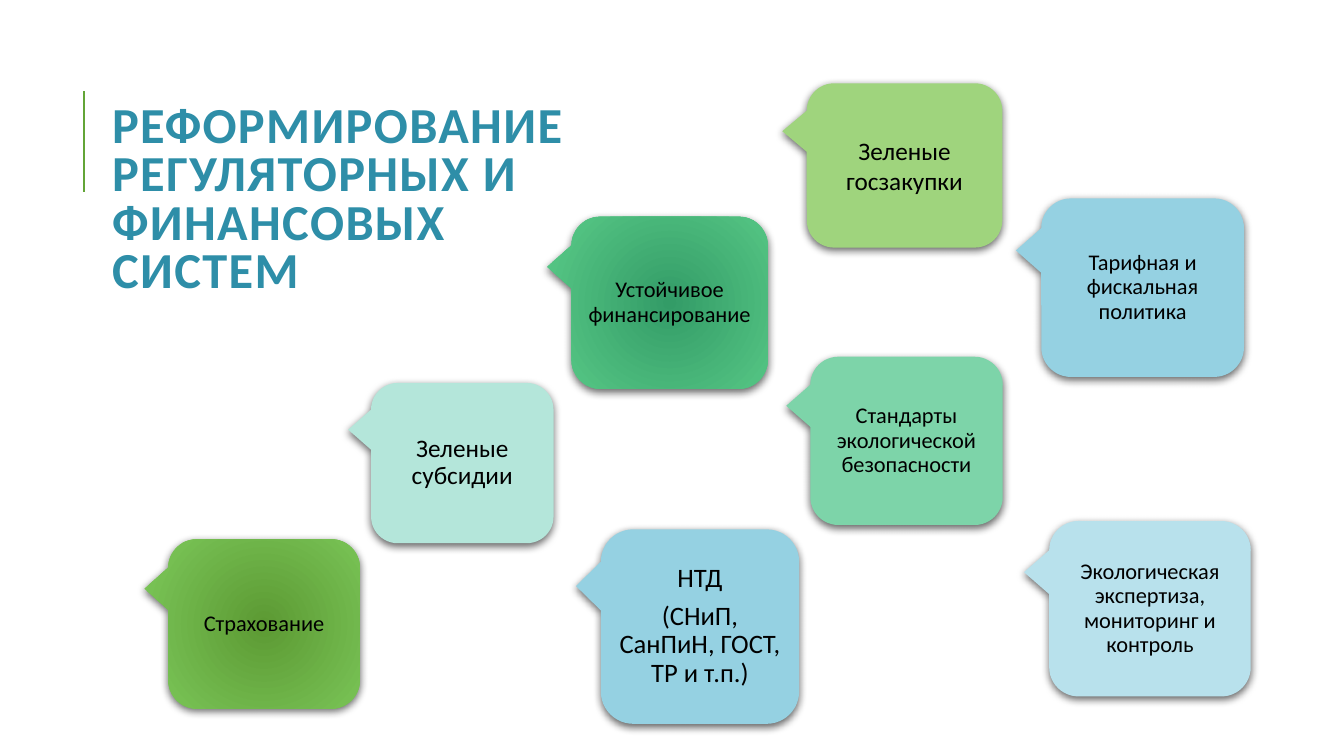
from lxml.etree import SubElement
from pptx import Presentation
from pptx.dml.color import RGBColor
from pptx.enum.shapes import MSO_CONNECTOR, MSO_SHAPE
from pptx.enum.text import MSO_ANCHOR, MSO_AUTO_SIZE, PP_ALIGN
from pptx.oxml import parse_xml
from pptx.oxml.ns import nsdecls, qn
from pptx.util import Cm, Pt

FONT = "Calibri"
BLACK = RGBColor(0x00, 0x00, 0x00)
TEAL = RGBColor(0x2E, 0x8E, 0xA8)
LEAF = RGBColor(0x63, 0xA5, 0x37)
SKY = RGBColor(0x95, 0xD1, 0xE2)
ICE = RGBColor(0xB8, 0xE1, 0xEC)
MINT = RGBColor(0xB4, 0xE6, 0xDA)
LIME = RGBColor(0x9F, 0xD4, 0x7D)
JADE = RGBColor(0x7D, 0xD4, 0xA9)
# Radial fills run from the centre to the edge
PINE = (RGBColor(0x33, 0x9C, 0x67), RGBColor(0x55, 0xC5, 0x84))
GRASS = (RGBColor(0x5C, 0x9A, 0x33), RGBColor(0x79, 0xC3, 0x56))

# The text area keeps clear of the rounded corners by this share of the side
CORNER = 0.0488

# Left, top, width, height in cm, fill, text size, text margin in cm, lines
CALLOUTS = [
    (26.24, 5.0, 5.11, 4.5, SKY, 16, 0.18, ["Тарифная и фискальная политика"]),
    (14.4, 5.46, 4.95, 4.34, PINE, 16, 0, ["Устойчивое финансирование"]),
    (9.35, 9.65, 4.6, 4.04, MINT, 18, 0.18, ["Зеленые субсидии"]),
    (20.33, 2.1, 4.93, 4.14, LIME, 18, 0, ["Зеленые госзакупки"]),
    (20.42, 8.99, 4.85, 4.24, JADE, 16, 0.18,
     ["Стандарты экологической безопасности"]),
    (4.24, 13.59, 4.83, 4.27, GRASS, 16, 0, ["Страхование"]),
    (15.14, 13.34, 5.0, 4.9, SKY, 19, 0.2,
     ["НТД", "(СНиП, СанПиН, ГОСТ, ТР и т.п.)"]),
    (26.44, 13.13, 5.08, 4.42, ICE, 16, 0,
     ["Экологическая экспертиза, мониторинг и контроль"]),
]


def write(frame, lines, size=16, color=BLACK, bold=False, align=PP_ALIGN.CENTER,
          lead=0.9, after=0, track=0, inset=None):
    frame.word_wrap = True
    frame.auto_size = MSO_AUTO_SIZE.NONE
    frame.vertical_anchor = MSO_ANCHOR.MIDDLE
    if inset is not None:
        frame.margin_left = frame.margin_right = Cm(inset)
        frame.margin_top = frame.margin_bottom = Cm(inset)
    for num, line in enumerate(lines):
        para = frame.add_paragraph() if num else frame.paragraphs[0]
        para.alignment = align
        para.line_spacing = lead
        para.space_before = Pt(0)
        para.space_after = Pt(after)
        run = para.add_run()
        run.text = line
        font = run.font
        font.name, font.size, font.bold = FONT, Pt(size), bold
        font.color.rgb = color
        if track:
            run._r.get_or_add_rPr().set("spc", str(track * 100))


def paint(shape, fill):
    if isinstance(fill, RGBColor):
        shape.fill.solid()
        shape.fill.fore_color.rgb = fill
        return
    shape.fill.gradient()
    for stop, color in zip(shape.fill.gradient_stops, fill):
        stop.color.rgb = color
    # Swap the linear direction for a circular one
    grad = shape._element.spPr.find(qn("a:gradFill"))
    grad.remove(grad.find(qn("a:lin")))
    grad.append(parse_xml(
        f'<a:path {nsdecls("a")} path="circle"><a:fillToRect l="100000" '
        't="100000" r="100000" b="100000"/></a:path>'))


def shade(shape):
    shape._element.spPr.append(parse_xml(
        f'<a:effectLst {nsdecls("a")}><a:outerShdw blurRad="{Pt(6)}" '
        f'dist="{Pt(2)}" dir="5400000" rotWithShape="0"><a:srgbClr '
        'val="000000"><a:alpha val="60000"/></a:srgbClr></a:outerShdw>'
        '</a:effectLst>'))


def add_callout(slide, left, top, wide, high, fill, size, inset, lines):
    group = slide.shapes.add_group_shape()
    # A quarter turn swaps the sides and brings the tail to the left
    shift = (wide - high) / 2
    shape = group.shapes.add_shape(
        MSO_SHAPE.ROUNDED_RECTANGULAR_CALLOUT,
        Cm(left + shift), Cm(top - shift), Cm(high), Cm(wide))
    shape.rotation = 90
    paint(shape, fill)
    shape.line.fill.background()
    shade(shape)
    # Upright text over the same centre
    pad = CORNER * min(wide, high)
    box = group.shapes.add_textbox(Cm(left + pad), Cm(top + pad),
                                   Cm(wide - 2 * pad), Cm(high - 2 * pad))
    lead = 1.0 if fill == LIME else 0.9
    write(box.text_frame, lines, size=size, lead=lead, after=6, inset=inset)


def add_rule(slide):
    rule = slide.shapes.add_connector(
        MSO_CONNECTOR.STRAIGHT, Cm(2.11), Cm(4.83), Cm(2.11), Cm(2.29))
    rule.line.color.rgb = LEAF
    rule.line.width = Pt(1.5)
    SubElement(rule._element.spPr, qn("a:effectLst"))


def add_title(slide):
    title = slide.shapes.title
    title.left, title.top = Cm(2.57), Cm(1.37)
    title.width, title.height = Cm(13.44), Cm(7.42)
    write(title.text_frame, ["РЕФОРМИРОВАНИЕ РЕГУЛЯТОРНЫХ И ФИНАНСОВЫХ СИСТЕМ"],
          size=36, color=TEAL, bold=True, align=PP_ALIGN.LEFT, lead=0.8, track=1)


def main():
    deck = Presentation()
    deck.slide_width, deck.slide_height = Cm(33.87), Cm(19.05)
    slide = deck.slides.add_slide(deck.slide_layouts[5])
    # Heading with its rule
    add_rule(slide)
    add_title(slide)
    # Reform measures
    for callout in CALLOUTS:
        add_callout(slide, *callout)
    deck.save("out.pptx")


if __name__ == "__main__":
    main()
